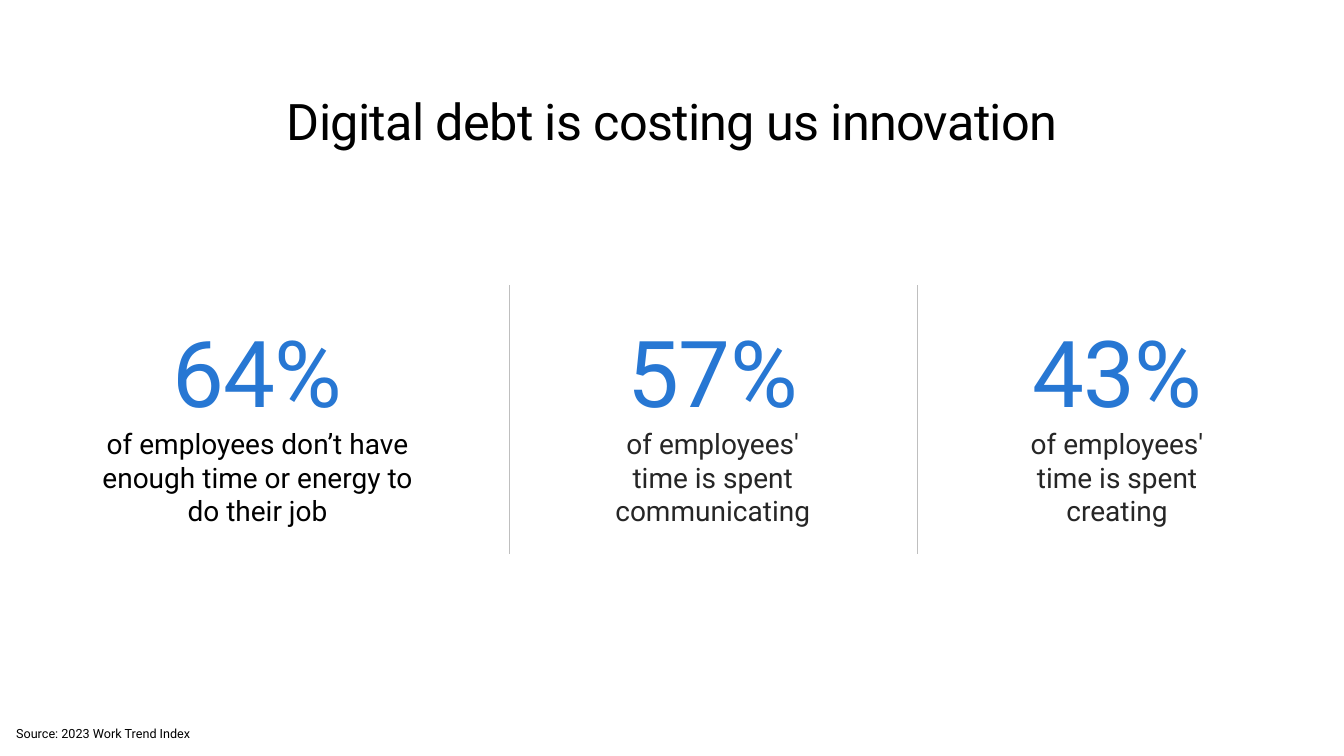
from pptx import Presentation
from pptx.dml.color import RGBColor
from pptx.enum.shapes import MSO_CONNECTOR
from pptx.enum.text import MSO_ANCHOR, MSO_AUTO_SIZE, PP_ALIGN
from pptx.oxml.ns import qn
from pptx.util import Inches, Pt
from lxml import etree

FONT = "Roboto"
COLORS = {
    "black": "000000",
    "charcoal": "262626",
    "divider": "BFBFBF",
    "blue": "2777D3",
    "violet": "796BCC",
}
STAT_TOP, STAT_HEIGHT = 3.13, 2.12
DIVIDER_TOP, DIVIDER_BOTTOM = 2.83, 5.5
DIVIDER_LEFTS = (5.05, 9.1)
STATS = [
    # left, width, figure, caption, caption colour
    (0.94, 3.23, "64%", "of employees don’t have enough time or energy to do their job", "black"),
    (5.94, 2.26, "57%", "of employees' time is spent communicating", "charcoal"),
    (10.16, 1.84, "43%", "of employees' time is spent creating", "charcoal"),
]


def color(name):
    return RGBColor.from_string(COLORS[name])


def set_frame(frame, wrap=True, anchor=MSO_ANCHOR.TOP):
    """Remove the margins and set wrapping and anchoring."""
    frame.margin_left = frame.margin_right = frame.margin_top = frame.margin_bottom = 0
    frame.auto_size = MSO_AUTO_SIZE.SHAPE_TO_FIT_TEXT
    frame.word_wrap = wrap
    frame.vertical_anchor = anchor


def add_box(page, left, top, width, height):
    box = page.shapes.add_textbox(Inches(left), Inches(top), Inches(width), Inches(height))
    set_frame(box.text_frame)
    return box.text_frame


def write(para, text, size, ink="black", align=PP_ALIGN.CENTER):
    span = para.add_run()
    span.text = text
    para.alignment = align
    para.font.name = FONT
    para.font.size = Pt(size)
    para.font.color.rgb = color(ink)
    return span


def tighten(span):
    """Draw the letters half a point closer together."""
    span.font._element.set("spc", "-50")


def add_title(page, text):
    title = page.shapes.title
    title.left, title.top = Inches(2.68), Inches(0.89)
    title.width, title.height = Inches(7.97), Inches(0.61)
    set_frame(title.text_frame, wrap=False, anchor=MSO_ANCHOR.MIDDLE)
    tighten(write(title.text_frame.paragraphs[0], text, 36))


def add_stat(page, left, width, figure, caption, ink):
    frame = add_box(page, left, STAT_TOP, width, STAT_HEIGHT)
    span = write(frame.paragraphs[0], figure, 66, "blue")
    tighten(span)
    fill = span.font.fill
    fill.gradient()
    fill.gradient_angle = 315
    for stop, name in zip(fill.gradient_stops, ("blue", "violet")):
        stop.color.rgb = color(name)
    write(frame.add_paragraph(), caption, 20, ink)


def add_divider(page, left):
    line = page.shapes.add_connector(
        MSO_CONNECTOR.STRAIGHT,
        Inches(left), Inches(DIVIDER_TOP), Inches(left), Inches(DIVIDER_BOTTOM),
    )
    line.line.color.rgb = color("divider")
    line.line.width = Pt(0.75)
    etree.SubElement(line._element.spPr, qn("a:effectLst"))


def add_source(page, text):
    frame = add_box(page, 0.16, 7.2, 2.21, 0.15)
    write(frame.paragraphs[0], text, 9, align=PP_ALIGN.LEFT)


def main():
    deck = Presentation()
    deck.slide_width, deck.slide_height = Inches(13.33), Inches(7.5)
    page = deck.slides.add_slide(deck.slide_layouts.get_by_name("Title Only"))
    add_title(page, "Digital debt is costing us innovation")
    for stat in STATS:
        add_stat(page, *stat)
    for left in DIVIDER_LEFTS:
        add_divider(page, left)
    add_source(page, "Source: 2023 Work Trend Index")
    deck.save("out.pptx")


if __name__ == "__main__":
    main()
